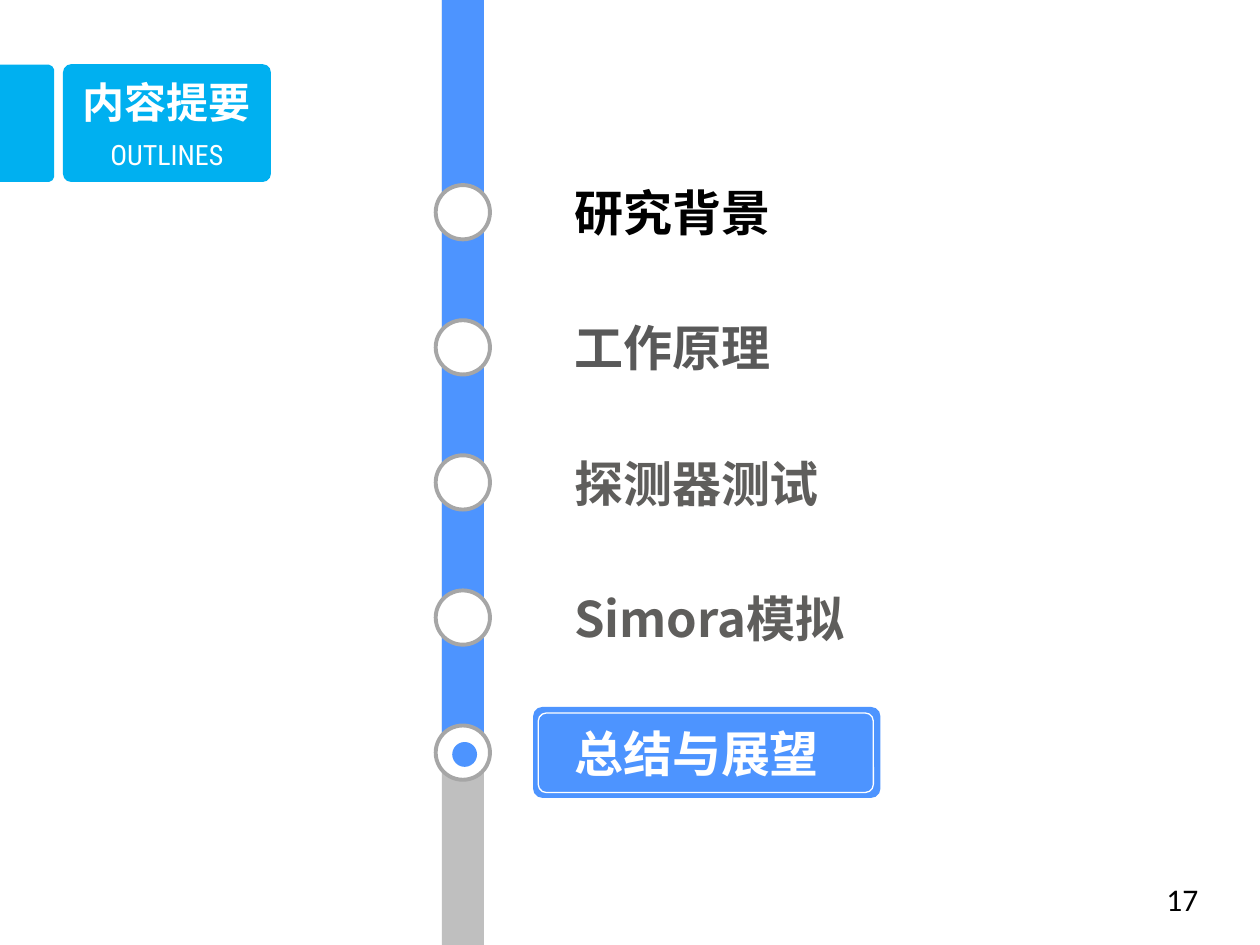
from lxml.etree import SubElement
from pptx import Presentation
from pptx.dml.color import RGBColor
from pptx.enum.shapes import MSO_SHAPE
from pptx.enum.text import MSO_ANCHOR, MSO_AUTO_SIZE, PP_ALIGN
from pptx.oxml.ns import qn
from pptx.util import Pt

HUES = {"sky": "00B0F0", "blue": "4D94FF", "rail": "BFBFBF", "ring": "A6A6A6",
        "white": "FFFFFF", "black": "000000", "dark": "595959", "warm": "5F5E5C"}
SANS_SC = "Noto Sans CJK SC"
SANS_JP = "Noto Sans CJK JP"
ITEMS = [("研究背景", "black", SANS_JP), ("工作原理", "dark", SANS_JP),
         ("探测器测试", "warm", SANS_SC), ("Simora模拟", "warm", SANS_SC),
         ("总结与展望", "white", SANS_SC)]
TOP, STEP = 100.8, 77.2


class Deck:
    """Holds the style and the current slide, and draws each kind of element."""

    def __init__(self, slide):
        self.slide = slide
        self.shapes = slide.shapes

    def hue(self, name):
        return RGBColor.from_string(HUES[name])

    def paint(self, shape, fill=None, line=None, width=0.75):
        shape.shadow.inherit = False
        if fill:
            shape.fill.solid()
            shape.fill.fore_color.rgb = self.hue(fill)
        else:
            shape.fill.background()
        if line:
            shape.line.color.rgb = self.hue(line)
            shape.line.width = Pt(width)
        else:
            shape.line.fill.background()

    def shape(self, kind, box, round=None, **look):
        shape = self.shapes.add_shape(kind, *map(Pt, box))
        if round:
            shape.adjustments[0] = round
        self.paint(shape, **look)

    def free(self, points, **look):
        pen = self.shapes.build_freeform(*points[0], scale=Pt(1))
        pen.add_line_segments(points[1:], close=True)
        self.paint(pen.convert_to_shape(), **look)

    def label(self, shape, text, hue, size, font, asian=None, bold=False,
              align=PP_ALIGN.LEFT):
        frame = shape.text_frame
        form = {"word_wrap": True, "auto_size": MSO_AUTO_SIZE.NONE,
                "vertical_anchor": MSO_ANCHOR.MIDDLE}
        for key, value in form.items():
            setattr(frame, key, value)
        para = frame.paragraphs[0]
        para.alignment = align
        run = para.add_run()
        run.text = text
        for key, value in {"name": font, "size": Pt(size), "bold": bold}.items():
            setattr(run.font, key, value)
        run.font.color.rgb = self.hue(hue)
        if asian:
            SubElement(run.font._element, qn("a:ea"), typeface=asian)

    def text(self, box, *words, **form):
        self.label(self.shapes.add_textbox(*map(Pt, box)), *words, **form)

    def title(self, box, *words, **form):
        title = self.shapes.title
        for key, value in zip(("left", "top", "width", "height"), box):
            setattr(title, key, Pt(value))
        self.label(title, *words, **form)
        title.element.getparent().append(title.element)


def main():
    show = Presentation()
    show.slide_width, show.slide_height = Pt(720), Pt(540)
    deck = Deck(show.slides.add_slide(show.slide_layouts[5]))
    rect, oval, soft = MSO_SHAPE.RECTANGLE, MSO_SHAPE.OVAL, MSO_SHAPE.ROUNDED_RECTANGLE

    deck.free([(0, 36.7), (28.5, 36.7), (30, 37.5), (30.6, 39.5), (30.6, 101),
               (30, 103), (28.5, 103.8), (0, 103.8)], fill="sky")
    deck.shape(soft, (36, 36.7, 118.8, 67.3), 0.069, fill="sky")
    deck.text((36, 74.9, 118.8, 26.6), "OUTLINES", "white", 16, "Roboto Condensed",
              align=PP_ALIGN.CENTER)
    deck.title((36, 40.3, 118.8, 36), "内容提要", "white", 24, "Calibri",
               asian=SANS_SC, bold=True, align=PP_ALIGN.CENTER)

    deck.shape(soft, (304.6, 404, 198.5, 52), 0.103, fill="blue")
    deck.shape(soft, (307.6, 407.4, 191.5, 45.5), 0.103, line="white")
    deck.shape(rect, (252.5, 0, 24, 540), fill="rail")
    deck.shape(rect, (252.5, 0, 24, 424), fill="blue")

    for row, (text, hue, font) in enumerate(ITEMS):
        top = TOP + row * STEP
        deck.shape(oval, (249, top + 5, 31, 31), fill="white", line="ring", width=2.25)
        deck.text((321.1, top, 187.2, 41), text, hue, 28, font, asian=font, bold=True)
    deck.shape(oval, (258.4, 424, 14.2, 14.2), fill="blue")

    deck.text((629.3, 500.4, 62.6, 26.6), "17", "black", 18, "Calibri",
              align=PP_ALIGN.RIGHT)
    show.save("out.pptx")


if __name__ == "__main__":
    main()
